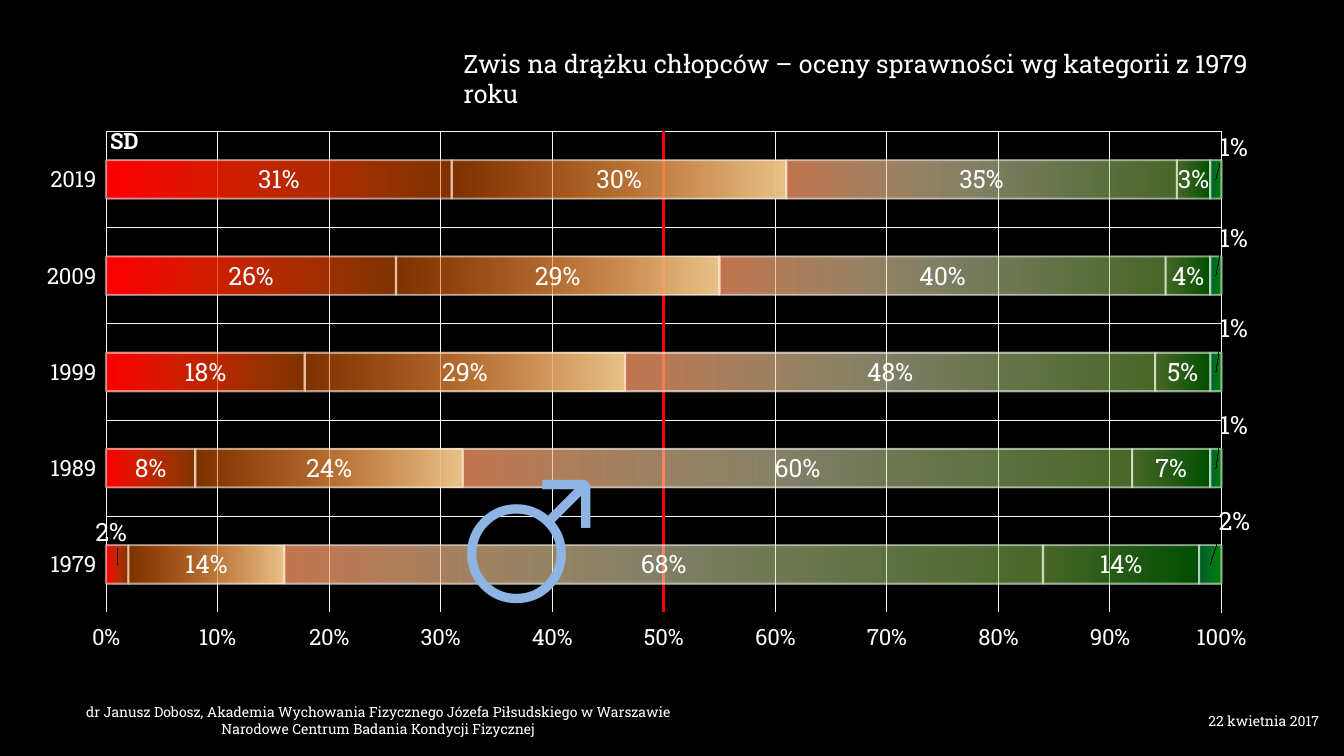
from lxml import etree
from pptx import Presentation
from pptx.chart.data import CategoryChartData
from pptx.dml.color import RGBColor
from pptx.enum.chart import XL_CHART_TYPE, XL_TICK_LABEL_POSITION, XL_TICK_MARK
from pptx.enum.text import MSO_ANCHOR, MSO_AUTO_SIZE, PP_ALIGN
from pptx.oxml import parse_xml
from pptx.oxml.ns import nsdecls, qn
from pptx.util import Inches, Pt

# Content
FONT, SYMBOL_FONT = "Roboto Slab", "Noto Sans Mono"
WHITE, LABEL, GRID = "FFFFFF", "FEFEFE", "F2F9FF"
YEARS = ["1979", "1989", "1999", "2009", "2019"]

# Values per year, then gradient stops (position %, colour, opacity %)
SERIES = [
    ([0.02, 0.08, 0.18, 0.26, 0.31], [(0, "FF0000", 100), (100, "FF6600", 50)]),
    ([0.14, 0.24, 0.29, 0.29, 0.30], [(0, "FF6600", 50), (100, "EBC48A", 100)]),
    ([0.68, 0.60, 0.48, 0.40, 0.35],
     [(0, "FF9966", 76), (50, "FFFFCC", 50), (100, "92D050", 50)]),
    ([0.14, 0.07, 0.05, 0.04, 0.03], [(0, "92D050", 50), (100, "009900", 52)]),
    ([0.02, 0.01, 0.01, 0.01, 0.01], [(0, "00B050", 50), (100, "008000", 100)]),
]

# Labels moved off narrow segments: (series, year index) -> shift as share of chart
LABEL_SHIFTS = {
    (0, 0): (-0.005, -0.06),
    (4, 0): (0.02, -0.08),
    (4, 1): (0.015, -0.08),
    (4, 2): (0.015, -0.08),
    (4, 3): (0.015, -0.07),
    (4, 4): (0.015, -0.06),
}

# Text, box, size, colour, font, alignment, anchor, grows with text
FOOTERS = [
    ("22 kwietnia 2017", (10.18, 6.95, 3, 0.4), 10, WHITE, FONT,
     PP_ALIGN.RIGHT, MSO_ANCHOR.MIDDLE, False),
    ("dr Janusz Dobosz, Akademia Wychowania Fizycznego Józefa Piłsudskiego w Warszawie\v"
     "Narodowe Centrum Badania Kondycji Fizycznej", (0.1, 6.95, 7.3, 0.4), 10, WHITE, FONT,
     PP_ALIGN.CENTER, MSO_ANCHOR.MIDDLE, False),
]
HEADINGS = [
    ("♂", (4.48, 4.3, 1.54, 1.95), 110, "8EB4E3", SYMBOL_FONT,
     PP_ALIGN.RIGHT, MSO_ANCHOR.TOP, True),
    ("Zwis na drążku chłopców – oceny sprawności wg kategorii z 1979 roku",
     (4.5, 0.43, 8.39, 0.4), 18, WHITE, FONT, PP_ALIGN.LEFT, MSO_ANCHOR.TOP, True),
]


def rgb(code):
    return RGBColor.from_string(code)


def style(font, size, color, name=FONT):
    font.size, font.name, font.color.rgb = Pt(size), name, rgb(color)


def add_text(s, text, box, size, color, name, align, anchor, grows):
    tf = s.shapes.add_textbox(*map(Inches, box)).text_frame
    tf.word_wrap = True
    tf.vertical_anchor = anchor
    tf.auto_size = MSO_AUTO_SIZE.SHAPE_TO_FIT_TEXT if grows else MSO_AUTO_SIZE.NONE
    p = tf.paragraphs[0]
    p.text, p.alignment = text, align
    for r in p.runs:
        style(r.font, size, color, name)


def set_line(line, color, width):
    line.color.rgb, line.width = rgb(color), Pt(width)


def set_layout(parent, index, **shares):
    """Put a manual layout at the given child index."""
    for old in parent.findall(qn("c:layout")):
        parent.remove(old)
    items = "".join(f'<c:{k} val="{v}"/>' for k, v in shares.items())
    parent.insert(index, parse_xml(
        f'<c:layout {nsdecls("c")}><c:manualLayout>{items}</c:manualLayout></c:layout>'))


def set_gradient(fmt, stops):
    """Fill from left to right, with a half-transparent white outline."""
    set_line(fmt.line, WHITE, 1.5)
    color = fmt.line._ln.find(".//" + qn("a:srgbClr"))
    etree.SubElement(color, qn("a:alpha")).set("val", "50000")
    items = "".join(
        f'<a:gs pos="{pos * 1000}"><a:srgbClr val="{code}">'
        f'<a:alpha val="{alpha * 1000}"/></a:srgbClr></a:gs>'
        for pos, code, alpha in stops)
    fmt.line._ln.addprevious(parse_xml(
        f'<a:gradFill {nsdecls("a")} rotWithShape="1"><a:gsLst>{items}</a:gsLst>'
        '<a:lin ang="0" scaled="0"/></a:gradFill>'))


def add_results_chart(s):
    data = CategoryChartData(number_format="0%")
    data.categories = YEARS
    for n, (values, _) in enumerate(SERIES, 1):
        data.add_series(f"Series {n}", values)
    chart = s.shapes.add_chart(XL_CHART_TYPE.BAR_STACKED_100, Inches(0.31), Inches(1.19),
                               Inches(12.09), Inches(5.39), data).chart
    chart.has_title = chart.has_legend = False
    style(chart.font, 10, WHITE)
    plot = chart.plots[0]
    plot.gap_width, plot.overlap, plot.vary_by_categories = 150, 100, False
    set_layout(chart._chartSpace.chart.plotArea, 0, layoutTarget="inner", xMode="edge",
               yMode="edge", x=0.062, y=0.021, w=0.925, h=0.886)

    # Axes: the red category axis stands at 50%
    years, share = chart.category_axis, chart.value_axis
    for axis, color, width in ((years, "FF0000", 2.5), (share, "000000", 1.25)):
        axis.major_tick_mark = axis.minor_tick_mark = XL_TICK_MARK.NONE
        axis.tick_label_position = XL_TICK_LABEL_POSITION.LOW
        axis.has_major_gridlines = True
        set_line(axis.major_gridlines.format.line, GRID, 0.75)
        set_line(axis.format.line, color, width)
        style(axis.tick_labels.font, 16, LABEL)
    share.minimum_scale, share.maximum_scale, share.major_unit = 0, 1, 0.1
    share.crosses_at = 0.5
    share.tick_labels.number_format = "0%"
    share.tick_labels.number_format_is_linked = False

    # Axis title in the top left corner of the plot
    title = share.axis_title
    title.text_frame.text = "SD"
    font = title.text_frame.paragraphs[0].runs[0].font
    style(font, 16, LABEL)
    font.bold = True
    set_layout(title._element, 1, xMode="edge", yMode="edge", x=0.062, y=0.0)

    # Segments and their labels
    for n, (series, (_, stops)) in enumerate(zip(plot.series, SERIES)):
        set_gradient(series.format, stops)
        labels = series.data_labels
        labels.show_value = True
        labels.number_format, labels.number_format_is_linked = "0%", False
        style(labels.font, 18, LABEL)
        for i in range(len(YEARS)):
            if (n, i) in LABEL_SHIFTS:
                style(series.points[i].data_label.font, 18, LABEL)
        for dLbl in series._element.findall(".//" + qn("c:dLbl")):
            x, y = LABEL_SHIFTS[n, int(dLbl.find(qn("c:idx")).get("val"))]
            set_layout(dLbl, 1, x=x, y=y)


def main():
    prs = Presentation()
    prs.slide_width, prs.slide_height = Inches(13.33), Inches(7.5)
    s = prs.slides.add_slide(prs.slide_layouts[6])
    s.background.fill.solid()
    s.background.fill.fore_color.rgb = rgb("000000")
    for item in FOOTERS:
        add_text(s, *item)
    add_results_chart(s)
    for item in HEADINGS:
        add_text(s, *item)
    prs.save("out.pptx")


if __name__ == "__main__":
    main()
